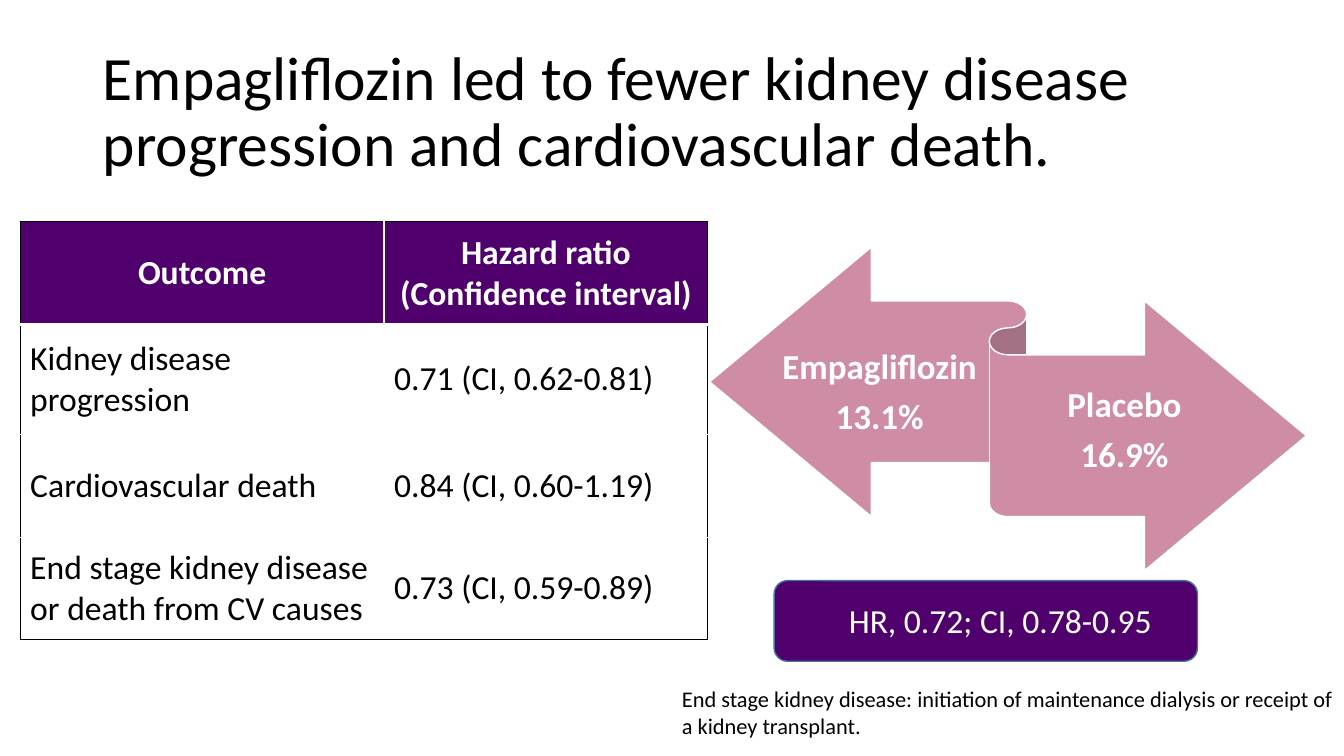
from dataclasses import dataclass

from lxml.etree import SubElement
from pptx import Presentation
from pptx.dml.color import RGBColor
from pptx.enum.shapes import MSO_SHAPE
from pptx.enum.text import MSO_ANCHOR, MSO_AUTO_SIZE, PP_ALIGN
from pptx.oxml.ns import qn
from pptx.util import Inches, Pt

SLIDE_WIDTH, SLIDE_HEIGHT = Inches(13.33), Inches(7.5)
FONT = "Calibri"
COLOURS = {
    "text": "000000",
    "light": "FFFFFF",
    "purple": "50006C",
    "rose": "CE8CA5",
    "outline": "43739E",
}


@dataclass(frozen=True)
class Area:
    """A rectangle in percent of the slide's width and height."""
    left: float
    top: float
    width: float
    height: float

    def lengths(self) -> tuple[int, int, int, int]:
        return (across(self.left), down(self.top),
                across(self.width), down(self.height))


@dataclass(frozen=True)
class TextStyle:
    size: float
    colour: str = "text"
    bold: bool = False
    alignment: PP_ALIGN = PP_ALIGN.LEFT
    line_spacing: float = 1.0
    space_after: float = 0


@dataclass(frozen=True)
class Label:
    area: Area
    lines: tuple[str, ...]
    style: TextStyle
    frame: dict


@dataclass(frozen=True)
class Panel:
    preset: MSO_SHAPE
    area: Area
    fill: str
    line: str


def across(percent: float) -> int:
    return round(SLIDE_WIDTH * percent / 100)


def down(percent: float) -> int:
    return round(SLIDE_HEIGHT * percent / 100)


def colour(name: str) -> RGBColor:
    return RGBColor.from_string(COLOURS[name])


def set_values(target, values: dict) -> None:
    for name, value in values.items():
        setattr(target, name, value)


def write_text(text_frame, lines: tuple[str, ...], style: TextStyle) -> None:
    for index, line in enumerate(lines):
        paragraph = text_frame.add_paragraph() if index else text_frame.paragraphs[0]
        set_values(paragraph, {
            "alignment": style.alignment,
            "line_spacing": style.line_spacing,
            "space_before": Pt(0),
            "space_after": Pt(style.space_after),
        })
        run = paragraph.add_run()
        run.text = line
        set_values(run.font, {"name": FONT, "size": Pt(style.size), "bold": style.bold})
        run.font.color.rgb = colour(style.colour)


def add_label(slide, label: Label) -> None:
    text_box = slide.shapes.add_textbox(*label.area.lengths())
    set_values(text_box.text_frame, {"word_wrap": True, **label.frame})
    write_text(text_box.text_frame, label.lines, label.style)


def add_panel(slide, panel: Panel) -> None:
    shape = slide.shapes.add_shape(panel.preset, *panel.area.lengths())
    shape.shadow.inherit = False
    shape.fill.solid()
    shape.fill.fore_color.rgb = colour(panel.fill)
    shape.line.color.rgb = colour(panel.line)
    shape.line.width = Pt(1)


def add_border(cell, side: str, name: str, width: float) -> None:
    properties = cell._tc.get_or_add_tcPr()
    line = SubElement(properties, qn(f"a:ln{side}"), w=str(Pt(width)))
    fill = SubElement(line, qn("a:solidFill"))
    SubElement(fill, qn("a:srgbClr"), val=COLOURS[name])


def add_outcome_table(slide) -> None:
    area = Area(TABLE_LEFT, TABLE_TOP, sum(TABLE_COLUMNS), sum(TABLE_ROWS))
    last_row, last_column = len(TABLE_ROWS) - 1, len(TABLE_COLUMNS) - 1
    table = slide.shapes.add_table(
        len(TABLE_ROWS), len(TABLE_COLUMNS), *area.lengths()).table
    set_values(table, {"first_row": False, "horz_banding": False})
    for column, width in zip(table.columns, TABLE_COLUMNS):
        column.width = across(width)
    for row, height in zip(table.rows, TABLE_ROWS):
        row.height = down(height)

    for row_index, row_values in enumerate(OUTCOMES):
        for column_index, value in enumerate(row_values):
            cell = table.cell(row_index, column_index)
            header = row_index == 0
            cell.vertical_anchor = MSO_ANCHOR.MIDDLE
            write_text(cell.text_frame, (value,), HEADER_STYLE if header else BODY_STYLE)
            # Black on the outer edge, white inside
            outer_sides = {
                "L": column_index == 0,
                "R": column_index == last_column,
                "T": header,
                "B": row_index == last_row,
            }
            for side, outer in outer_sides.items():
                below_header = (header and side == "B") or (row_index == 1 and side == "T")
                add_border(cell, side, "text" if outer else "light", 3 if below_header else 1)
            if header:
                cell.fill.solid()
                cell.fill.fore_color.rgb = colour("purple")
            else:
                cell.fill.background()


# Content
TITLE = "Empagliflozin led to fewer kidney disease progression and cardiovascular death."
TITLE_AREA = Area(6.9, 5.33, 86.25, 19.33)
TITLE_STYLE = TextStyle(44, line_spacing=0.9)

TABLE_LEFT, TABLE_TOP = 1.5, 29.33
TABLE_COLUMNS = (27.08, 24.08)
TABLE_ROWS = (13.6, 14.53, 13.6, 13.6)
HEADER_STYLE = TextStyle(24, "light", True, PP_ALIGN.CENTER)
BODY_STYLE = TextStyle(24)
OUTCOMES = (
    ("Outcome", "Hazard ratio (Confidence interval)"),
    ("Kidney disease progression", "0.71 (CI, 0.62-0.81)"),
    ("Cardiovascular death", "0.84 (CI, 0.60-1.19)"),
    ("End stage kidney disease or death from CV causes", "0.73 (CI, 0.59-0.89)"),
)

PANELS = (
    Panel(MSO_SHAPE.LEFT_RIGHT_RIBBON, Area(52.8, 32.67, 44.4, 42.8), "rose", "light"),
    Panel(MSO_SHAPE.ROUNDED_RECTANGLE, Area(57.6, 76.8, 31.5, 10.67), "purple", "outline"),
)

ARROW_STYLE = TextStyle(25, "light", True, PP_ALIGN.CENTER, 0.9, 8.75)
ARROW_FRAME = {"vertical_anchor": MSO_ANCHOR.MIDDLE, "margin_left": 0, "margin_right": 0,
               "margin_top": Inches(0.1), "margin_bottom": Inches(0.1)}
LABELS = (
    Label(Area(58.13, 44.27, 14.63, 15.47), ("Empagliflozin", "13.1%"),
          ARROW_STYLE, ARROW_FRAME),
    Label(Area(75, 49.33, 17.33, 15.47), ("Placebo", "16.9%"),
          ARROW_STYLE, ARROW_FRAME),
    Label(Area(62.33, 78.67, 24.22, 6.67), ("HR, 0.72; CI, 0.78-0.95",),
          TextStyle(24, "light", alignment=PP_ALIGN.CENTER), {"word_wrap": False}),
    Label(Area(50, 90, 50, 8.53),
          ("End stage kidney disease: initiation of maintenance dialysis "
           "or receipt of a kidney transplant.",),
          TextStyle(16), {}),
)


def main() -> None:
    presentation = Presentation()
    set_values(presentation, {"slide_width": SLIDE_WIDTH, "slide_height": SLIDE_HEIGHT})
    slide = presentation.slides.add_slide(presentation.slide_layouts[5])

    # Title
    title = slide.shapes.title
    set_values(title, dict(zip(("left", "top", "width", "height"), TITLE_AREA.lengths())))
    set_values(title.text_frame, {"word_wrap": True, "auto_size": MSO_AUTO_SIZE.NONE,
                                  "vertical_anchor": MSO_ANCHOR.MIDDLE})
    write_text(title.text_frame, (TITLE,), TITLE_STYLE)

    # Ribbon, result box and table, then the text over them
    for panel in PANELS:
        add_panel(slide, panel)
    add_outcome_table(slide)
    for label in LABELS:
        add_label(slide, label)

    presentation.save("out.pptx")


if __name__ == "__main__":
    main()
